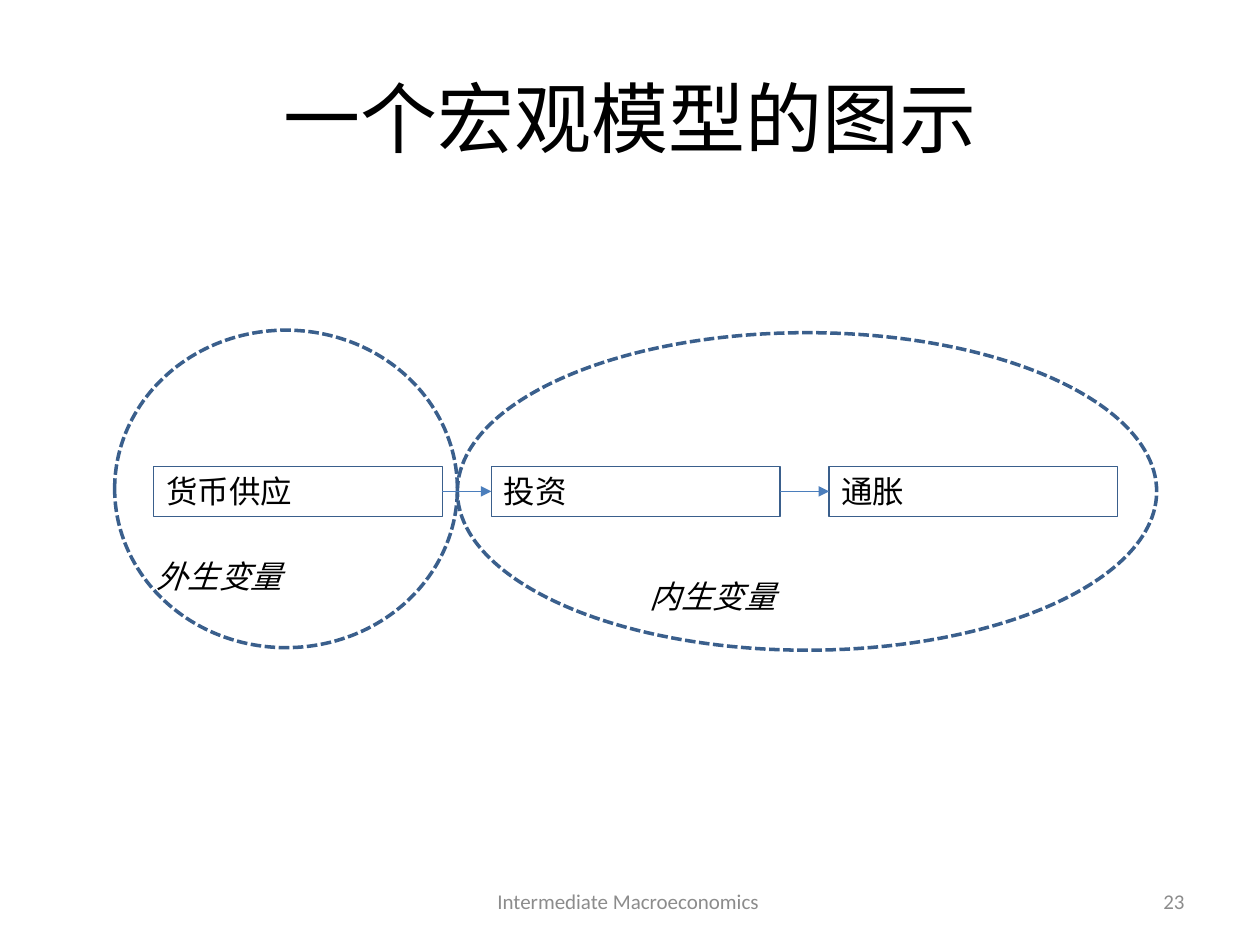
from lxml import etree
from pptx import Presentation
from pptx.dml.color import RGBColor
from pptx.enum.dml import MSO_LINE
from pptx.enum.shapes import MSO_CONNECTOR, MSO_SHAPE
from pptx.enum.text import MSO_ANCHOR, PP_ALIGN
from pptx.oxml.ns import qn
from pptx.util import Inches, Pt

RECTANGLE = MSO_SHAPE.RECTANGLE
OVAL = MSO_SHAPE.OVAL
STRAIGHT = MSO_CONNECTOR.STRAIGHT
DASH = MSO_LINE.SQUARE_DOT
LEFT, CENTER, RIGHT = PP_ALIGN.LEFT, PP_ALIGN.CENTER, PP_ALIGN.RIGHT
TOP, MIDDLE = MSO_ANCHOR.TOP, MSO_ANCHOR.MIDDLE
LEFT_SIDE, RIGHT_SIDE = 1, 3

FONT = "Calibri"
COLORS = {"text": "000000", "footer": "8C8C8C", "outline": "3A5F8C", "arrow": "4B7EBC"}

BOX_LEFT, BOX_TOP, BOX_WIDTH, BOX_HEIGHT = 1.22, 3.7, 2.29, 0.4
BOX_STEP = 2.68


def color(name):
    return RGBColor.from_string(COLORS[name])


def write_text(shape, text, size, color_name="text", align=LEFT, anchor=TOP, italic=False):
    frame = shape.text_frame
    frame.word_wrap = True
    frame.vertical_anchor = anchor
    paragraph = frame.paragraphs[0]
    paragraph.alignment = align
    run = paragraph.add_run()
    run.text = text
    run.font.name = FONT
    run.font.size = Pt(size)
    run.font.italic = italic
    run.font.color.rgb = color(color_name)


def add_title(slide, text):
    title = slide.shapes.title
    title.left, title.top = Inches(0.5), Inches(0.3)
    title.width, title.height = Inches(9), Inches(1.25)
    write_text(title, text, 44, align=CENTER, anchor=MIDDLE)


def add_label(slide, text, left, top, width, **style):
    label = slide.shapes.add_textbox(Inches(left), Inches(top), Inches(width), Inches(0.4))
    write_text(label, text, **style)


def add_outline(slide, kind, left, top, width, height, weight):
    shape = slide.shapes.add_shape(
        kind, Inches(left), Inches(top), Inches(width), Inches(height)
    )
    shape.shadow.inherit = False
    shape.fill.background()
    shape.line.color.rgb = color("outline")
    shape.line.width = Pt(weight)
    return shape


def add_group_oval(slide, left, top, width):
    oval = add_outline(slide, OVAL, left, top, width, 2.52, 2)
    oval.line.dash_style = DASH


def add_variable_box(slide, text, index):
    left = BOX_LEFT + index * BOX_STEP
    box = add_outline(slide, RECTANGLE, left, BOX_TOP, BOX_WIDTH, BOX_HEIGHT, 0.75)
    write_text(box, text, 18)
    return box


def add_arrow(slide, source, target):
    arrow = slide.shapes.add_connector(STRAIGHT, 0, 0, 0, 0)
    arrow.begin_connect(source, RIGHT_SIDE)
    arrow.end_connect(target, LEFT_SIDE)
    arrow.line.color.rgb = color("arrow")
    arrow.line.width = Pt(0.75)
    etree.SubElement(arrow.line._get_or_add_ln(), qn("a:tailEnd"), type="triangle")
    etree.SubElement(arrow._element.spPr, qn("a:effectLst"))


def main():
    presentation = Presentation()
    presentation.slide_width, presentation.slide_height = Inches(10), Inches(7.5)
    slide = presentation.slides.add_slide(presentation.slide_layouts[5])

    add_title(slide, "一个宏观模型的图示")
    footer = {"size": 12, "color_name": "footer", "anchor": MIDDLE}
    add_label(slide, "Intermediate Macroeconomics ", 3.42, 6.95, 3.17, align=CENTER, **footer)
    add_label(slide, "23", 7.17, 6.95, 2.33, align=RIGHT, **footer)

    add_group_oval(slide, 3.63, 2.64, 5.55)
    add_group_oval(slide, 0.91, 2.62, 2.72)

    names = ["货币供应", "投资", "通胀"]
    boxes = [add_variable_box(slide, name, index) for index, name in enumerate(names)]
    for source, target in zip(boxes, boxes[1:]):
        add_arrow(slide, source, target)

    add_label(slide, "内生变量", 5.06, 4.53, 2.83, size=18, italic=True)
    add_label(slide, "外生变量", 1.14, 4.37, 2.83, size=18, italic=True)

    presentation.save("out.pptx")


if __name__ == "__main__":
    main()
